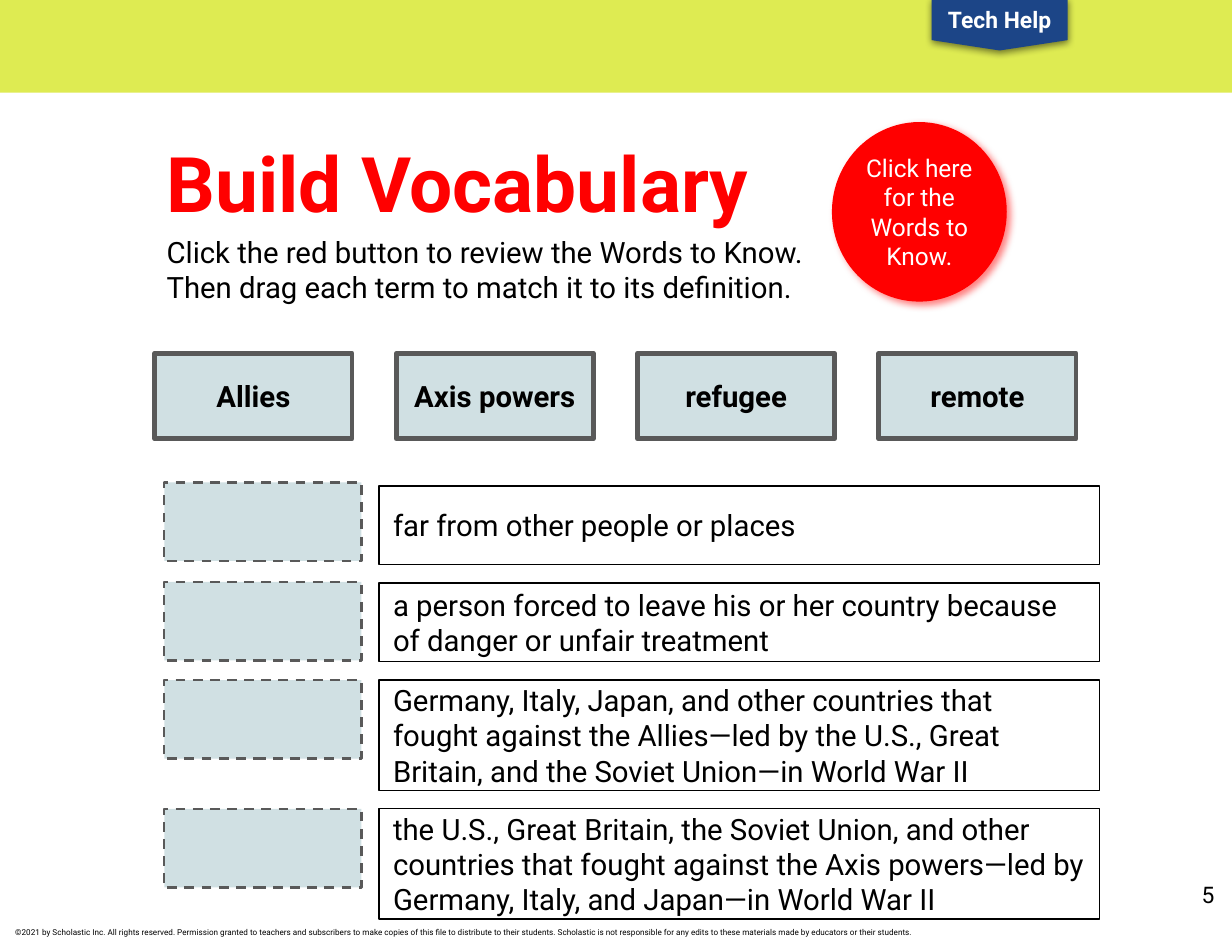
from lxml.etree import SubElement
from pptx import Presentation
from pptx.dml.color import RGBColor
from pptx.enum.dml import MSO_LINE
from pptx.enum.shapes import MSO_SHAPE as Shape
from pptx.enum.text import MSO_ANCHOR as Anchor, PP_ALIGN as Align
from pptx.oxml.ns import qn
from pptx.util import Inches, Pt

# Content
TITLE = "Build Vocabulary"
DIRECTIONS = ("Click the red button to review the Words to Know.\n"
              "Then drag each term to match it to its definition.")
BUTTON = "Click here for the Words to Know."
HELP = "Tech Help"
TERMS = ["Allies", "Axis powers", "refugee", "remote"]
# Definition, box height, how far its drop target sits above it
DEFINITIONS = [
    ("far from other people or places", 0.67, 0.03),
    ("a person forced to leave his or her country because of danger "
     "or unfair treatment", 0.67, 0.01),
    ("Germany, Italy, Japan, and other countries that fought against the "
     "Allies—led by the U.S., Great Britain, and the Soviet Union—in "
     "World War II", 0.94, 0),
    ("the U.S., Great Britain, the Soviet Union, and other countries that "
     "fought against the Axis powers—led by Germany, Italy, and Japan—in "
     "World War II", 0.94, 0),
]
COPYRIGHT = ("©2021 by Scholastic Inc. All rights reserved. Permission granted "
             "to teachers and subscribers to make copies of this file to "
             "distribute to their students. Scholastic is not responsible for "
             "any edits to these materials made by educators or their students.")
PAGE_NUMBER = "5"

THEME = {
    "font": "Roboto",
    "black": "000000", "white": "FFFFFF", "red": "FF0000", "navy": "1C4587",
    "lime": "DEEB52", "mist": "D0E0E3", "gray": "595959",
    "title": 47, "body": 18, "button": 15, "label": 14, "fine": 5,
}

# Grid, in inches
WIDTH, HEIGHT = 10.5, 8
CARD_WIDTH = 1.68
TERM_LEFT, TERM_TOP, TERM_HEIGHT, TERM_STEP = 1.32, 3.01, 0.73, 2.057
TARGET_LEFT, TARGET_HEIGHT = 1.4, 0.67
DEFINITION_LEFT, DEFINITION_WIDTH = 3.23, 6.14
DEFINITION_TOP, DEFINITION_GAP = 4.14, 0.157

deck = Presentation()
deck.slide_width, deck.slide_height = Inches(WIDTH), Inches(HEIGHT)
page = deck.slides.add_slide(deck.slide_layouts[6])


def color(name):
    return RGBColor.from_string(THEME[name])


def write(box, text, size="body", ink="black", bold=False, align=Align.LEFT,
          anchor=Anchor.MIDDLE, inset=0.12):
    frame = box.text_frame
    frame.word_wrap = True
    frame.vertical_anchor = anchor
    frame.margin_left = frame.margin_right = Inches(inset)
    frame.margin_top = frame.margin_bottom = Inches(inset)
    para = frame.paragraphs[0]
    para.text = text
    para.alignment = align
    para.font.name = THEME["font"]
    para.font.size = Pt(THEME[size])
    para.font.bold = bold
    para.font.color.rgb = color(ink)


def add_text(area, text, **style):
    write(page.shapes.add_textbox(*map(Inches, area)), text, **style)


def add_block(area, fill=None, line=None, width=0.75, dash=None, kind=Shape.RECTANGLE):
    block = page.shapes.add_shape(kind, *map(Inches, area))
    block.shadow.inherit = False
    if fill:
        block.fill.solid()
        block.fill.fore_color.rgb = color(fill)
    else:
        block.fill.background()
    if line:
        block.line.color.rgb = color(line)
        block.line.width = Pt(width)
        block.line.dash_style = dash
    else:
        block.line.fill.background()
    return block


def add_shadow(block, ink, distance, angle, blur=4.5, opacity=50):
    effects = block._element.spPr.find(qn("a:effectLst"))
    shadow = SubElement(effects, qn("a:outerShdw"), blurRad=str(Pt(blur)),
                        dist=str(Pt(distance)), dir=str(angle * 60000),
                        algn="bl", rotWithShape="0")
    tint = SubElement(shadow, qn("a:srgbClr"), val=THEME[ink])
    SubElement(tint, qn("a:alpha"), val=str(opacity * 1000))


# Header band, copyright line and help tab
add_block((0, -0.01, WIDTH, 0.8), "lime")
add_text((0.13, 7.9, 8.77, 0.1), COPYRIGHT, size="fine", anchor=Anchor.TOP, inset=0)
help_tab = add_block((7.94, -0.01, 1.16, 0.44), "navy",
                     kind=Shape.FLOWCHART_OFFPAGE_CONNECTOR)
add_shadow(help_tab, "black", distance=1.5, angle=90)
write(help_tab, HELP, size="label", ink="white", bold=True, align=Align.CENTER, inset=0.1)

# Title and directions
add_text((1.3, 1.04, 5.48, 0.89), TITLE, size="title", ink="red", bold=True,
         anchor=Anchor.TOP)
add_text((1.3, 1.85, 6.24, 0.89), DIRECTIONS)

# Definitions with their drop targets
top = DEFINITION_TOP
for definition, height, lift in DEFINITIONS:
    box = add_block((DEFINITION_LEFT, top, DEFINITION_WIDTH, height), line="black")
    write(box, definition)
    add_block((TARGET_LEFT, top - lift, CARD_WIDTH, TARGET_HEIGHT),
              "mist", "gray", 1.5, MSO_LINE.DASH)
    top += height + DEFINITION_GAP

# Round button
button = add_block((7.09, 1.04, 1.49, 1.53), "red", kind=Shape.OVAL)
add_shadow(button, "red", distance=3, angle=43)
write(button, BUTTON, size="button", ink="white", align=Align.CENTER, inset=0)

# Page number
add_text((9.83, 7.39, 0.63, 0.61), PAGE_NUMBER, size="label", align=Align.RIGHT,
         anchor=Anchor.TOP, inset=0.11)

# Term cards
for column, term in enumerate(TERMS):
    card = add_block((TERM_LEFT + column * TERM_STEP, TERM_TOP, CARD_WIDTH, TERM_HEIGHT),
                     "mist", "gray", 3)
    write(card, term, bold=True, align=Align.CENTER, inset=0.1)

deck.save("out.pptx")
